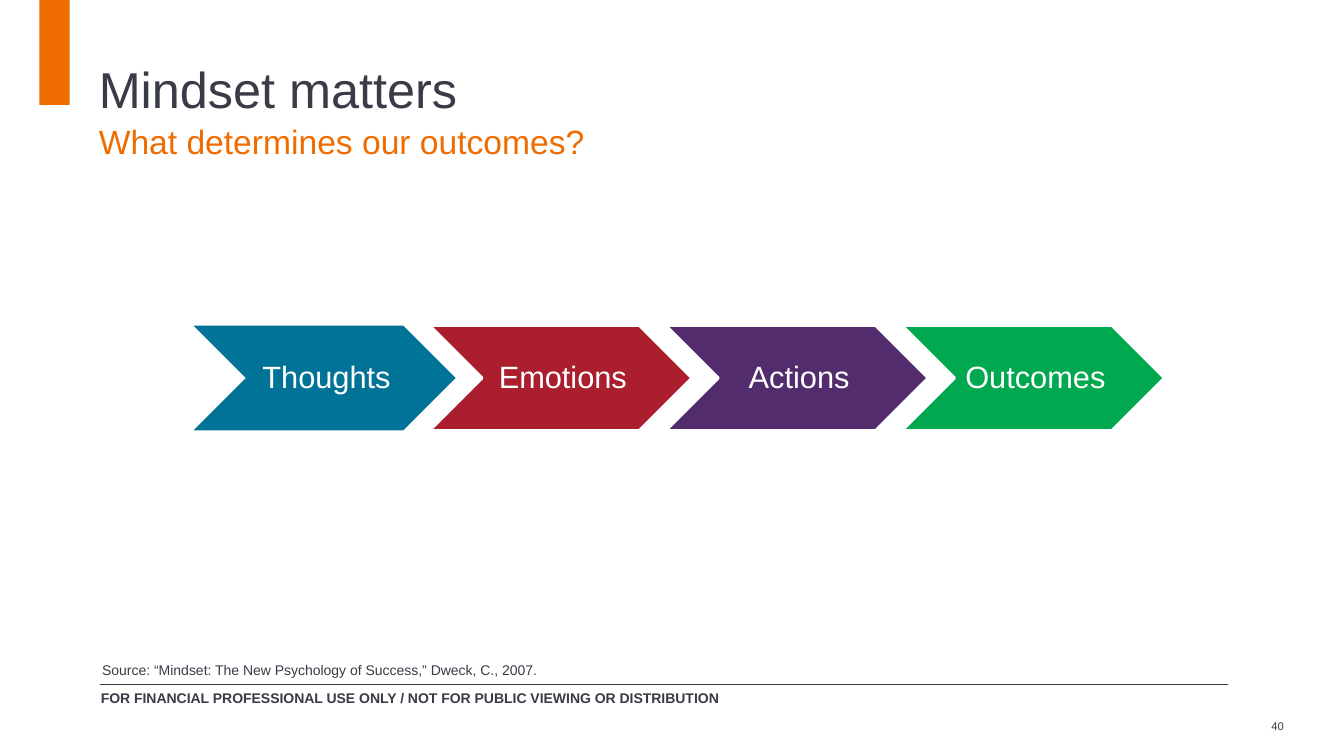
from dataclasses import dataclass

from lxml.etree import SubElement
from pptx import Presentation
from pptx.dml.color import RGBColor
from pptx.enum.shapes import MSO_CONNECTOR, MSO_SHAPE
from pptx.enum.text import MSO_ANCHOR, PP_ALIGN
from pptx.oxml.ns import qn
from pptx.util import Inches, Pt


@dataclass(frozen=True)
class Theme:
    font: str = "Arial"
    ink: str = "393C46"
    accent: str = "EF6C00"
    white: str = "FFFFFF"
    teal: str = "007397"
    red: str = "AA1E2D"
    purple: str = "522C6C"
    green: str = "00A84F"
    title: int = 36
    subtitle: int = 24
    step: int = 22
    note: int = 10
    number: int = 8


THEME = Theme()
WIDTH, HEIGHT = Inches(13.33), Inches(7.5)
MARGIN = 7.43  # left text edge, percent of the width


def across(percent):
    return round(WIDTH * percent / 100)


def down(percent):
    return round(HEIGHT * percent / 100)


def area(left, top, width, height):
    """Turn percentages of the slide into lengths."""
    return across(left), down(top), across(width), down(height)


def write(para, text, size, color=THEME.ink, bold=False, align=PP_ALIGN.LEFT, before=0):
    para.alignment = align
    para.space_before = Pt(before)
    span = para.add_run()
    span.text = text
    span.font.name = THEME.font
    span.font.size = Pt(size)
    span.font.bold = bold
    span.font.color.rgb = RGBColor.from_string(color)


def clear_margins(frame):
    frame.margin_left = frame.margin_right = 0
    frame.margin_top = frame.margin_bottom = 0


def add_text(page, place, text, size, **style):
    frame = page.shapes.add_textbox(*area(*place)).text_frame
    frame.word_wrap = True
    clear_margins(frame)
    write(frame.paragraphs[0], text, size, **style)
    return frame


def add_filled(page, kind, place, color, outline=None):
    shape = page.shapes.add_shape(kind, *area(*place))
    shape.shadow.inherit = False
    shape.fill.solid()
    shape.fill.fore_color.rgb = RGBColor.from_string(color)
    if outline:
        shape.line.color.rgb = RGBColor.from_string(outline)
        shape.line.width = Pt(2)
    else:
        shape.line.fill.background()
    return shape


def add_step(page, place, label, color, outline):
    frame = add_filled(page, MSO_SHAPE.CHEVRON, place, color, outline).text_frame
    frame.word_wrap = False
    frame.vertical_anchor = MSO_ANCHOR.MIDDLE
    clear_margins(frame)
    frame.margin_left = frame.margin_bottom = Inches(0.04)
    write(frame.paragraphs[0], label, THEME.step, color=THEME.white, align=PP_ALIGN.CENTER)


def add_rule(page, left, top, width):
    rule = page.shapes.add_connector(
        MSO_CONNECTOR.STRAIGHT, across(left), down(top), across(left + width), down(top))
    rule.line.color.rgb = RGBColor.from_string(THEME.ink)
    rule.line.width = Pt(0.5)
    SubElement(rule._element.spPr, qn("a:effectLst"))


def main():
    deck = Presentation()
    deck.slide_width, deck.slide_height = WIDTH, HEIGHT
    page = deck.slides.add_slide(deck.slide_layouts[6])

    # Accent tab and headings
    add_filled(page, MSO_SHAPE.RECTANGLE, (2.93, 0, 2.25, 13.87), THEME.accent)
    heading = add_text(page, (7.35, 7.67, 87, 13), "Mindset matters", THEME.title)
    write(heading.add_paragraph(), "What determines our outcomes?", THEME.subtitle,
          color=THEME.accent, before=1.5)

    # Chain of steps
    steps = [("Thoughts", THEME.teal), ("Emotions", THEME.red),
             ("Actions", THEME.purple), ("Outcomes", THEME.green)]
    for index, (label, color) in enumerate(steps):
        place = (14.4 + 17.58 * index, 43.07, 19.5, 13.87)
        add_step(page, place, label, color, THEME.white if index else None)

    # Footer
    add_text(page, (7.6, 87.47, 40, 2.5),
             "Source: “Mindset: The New Psychology of Success,” Dweck, C., 2007.", THEME.note)
    add_rule(page, MARGIN, 91.2 - 0.67, 83.95)
    add_text(page, (7.5, 91.2, 60, 2.5),
             "FOR FINANCIAL PROFESSIONAL USE ONLY / NOT FOR PUBLIC VIEWING OR DISTRIBUTION",
             THEME.note, bold=True)
    add_text(page, (94.6, 95.2, 2.2, 2), "40", THEME.number)

    deck.save("out.pptx")


if __name__ == "__main__":
    main()
